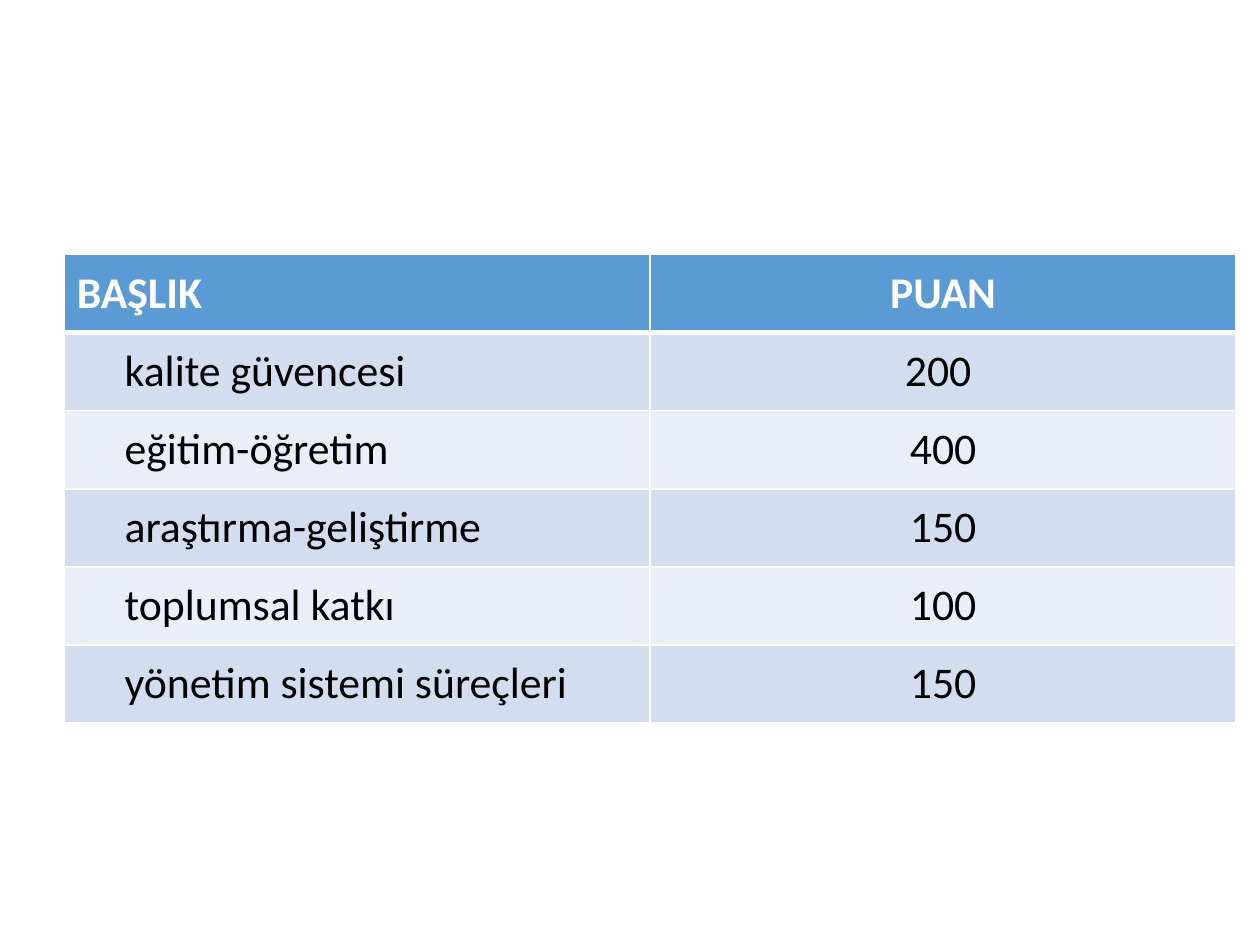
from lxml import etree
from pptx import Presentation
from pptx.dml.color import RGBColor
from pptx.enum.text import MSO_ANCHOR, PP_ALIGN
from pptx.oxml.ns import qn
from pptx.util import Inches, Pt

LEFT, CENTER = PP_ALIGN.LEFT, PP_ALIGN.CENTER
MIDDLE = MSO_ANCHOR.MIDDLE

HEADER = ("BAŞLIK", "PUAN")
SCORES = [
    ("kalite güvencesi", "200 "),
    ("eğitim-öğretim", "400"),
    ("araştırma-geliştirme", "150"),
    ("toplumsal katkı", "100"),
    ("yönetim sistemi süreçleri", "150"),
]
THEME = {
    "font": "Calibri",
    "size": 25,
    "header": "5B9BD5",
    "bands": ("D2DEEF", "EAEFF7"),
    "header_text": "FFFFFF",
    "text": "000000",
    "border": "FFFFFF",
}
TABLE_LEFT, TABLE_TOP = 0.51, 2.02
COLUMN_WIDTH, ROW_HEIGHT = 4.65, 0.62
LABEL_INDENT = 0.38


def add_borders(cell, top, bottom):
    """Line all four sides; top and bottom are widths in points."""
    properties = cell._tc.get_or_add_tcPr()
    for side, width in (("L", 1), ("R", 1), ("T", top), ("B", bottom)):
        line = etree.SubElement(properties, qn(f"a:ln{side}"), w=str(Pt(width)))
        fill = etree.SubElement(line, qn("a:solidFill"))
        etree.SubElement(fill, qn("a:srgbClr"), val=THEME["border"])


def fill_cell(cell, text, row, column):
    is_header = row == 0
    add_borders(cell, top=3 if row == 1 else 1, bottom=3 if is_header else 1)
    cell.fill.solid()
    background = THEME["header"] if is_header else THEME["bands"][(row - 1) % 2]
    cell.fill.fore_color.rgb = RGBColor.from_string(background)
    cell.vertical_anchor = MIDDLE

    para = cell.text_frame.paragraphs[0]
    para.text = text
    para.alignment = CENTER if column else LEFT
    if not is_header and column == 0:
        para.level = 1
        properties = para._p.get_or_add_pPr()
        properties.set("marL", str(Inches(LABEL_INDENT)))
        properties.set("indent", "0")

    font = para.runs[0].font
    font.name = THEME["font"]
    font.size = Pt(THEME["size"])
    font.bold = is_header
    color = THEME["header_text"] if is_header else THEME["text"]
    font.color.rgb = RGBColor.from_string(color)


def main():
    deck = Presentation()
    deck.slide_width, deck.slide_height = Inches(10), Inches(7.5)
    page = deck.slides.add_slide(deck.slide_layouts[6])

    rows = [HEADER, *SCORES]
    table = page.shapes.add_table(
        len(rows), len(HEADER), Inches(TABLE_LEFT), Inches(TABLE_TOP),
        Inches(COLUMN_WIDTH * len(HEADER)), Inches(ROW_HEIGHT * len(rows)),
    ).table
    for column in table.columns:
        column.width = Inches(COLUMN_WIDTH)
    for row_index, texts in enumerate(rows):
        table.rows[row_index].height = Inches(ROW_HEIGHT)
        for column_index, text in enumerate(texts):
            fill_cell(table.cell(row_index, column_index), text, row_index, column_index)

    deck.save("out.pptx")


if __name__ == "__main__":
    main()
